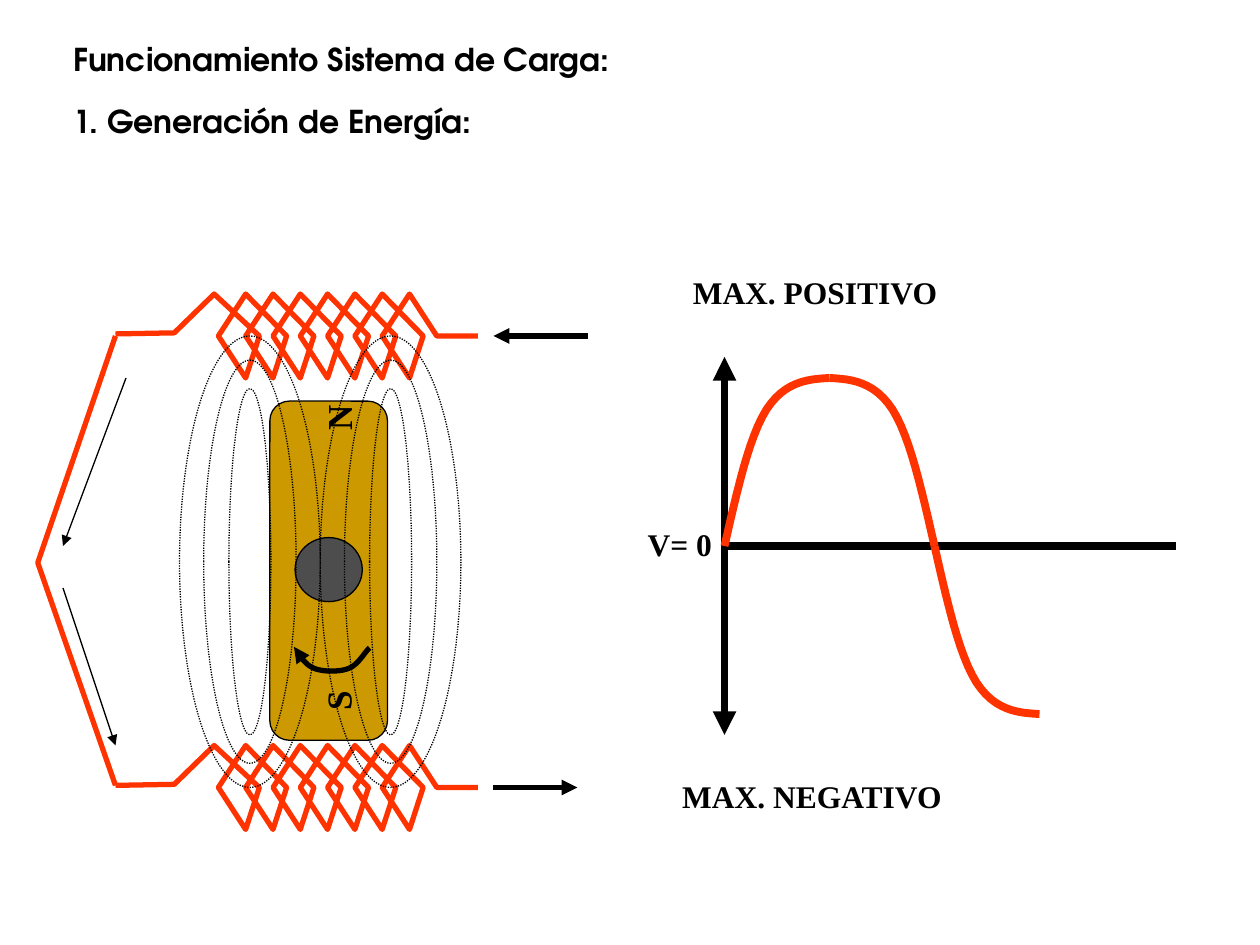
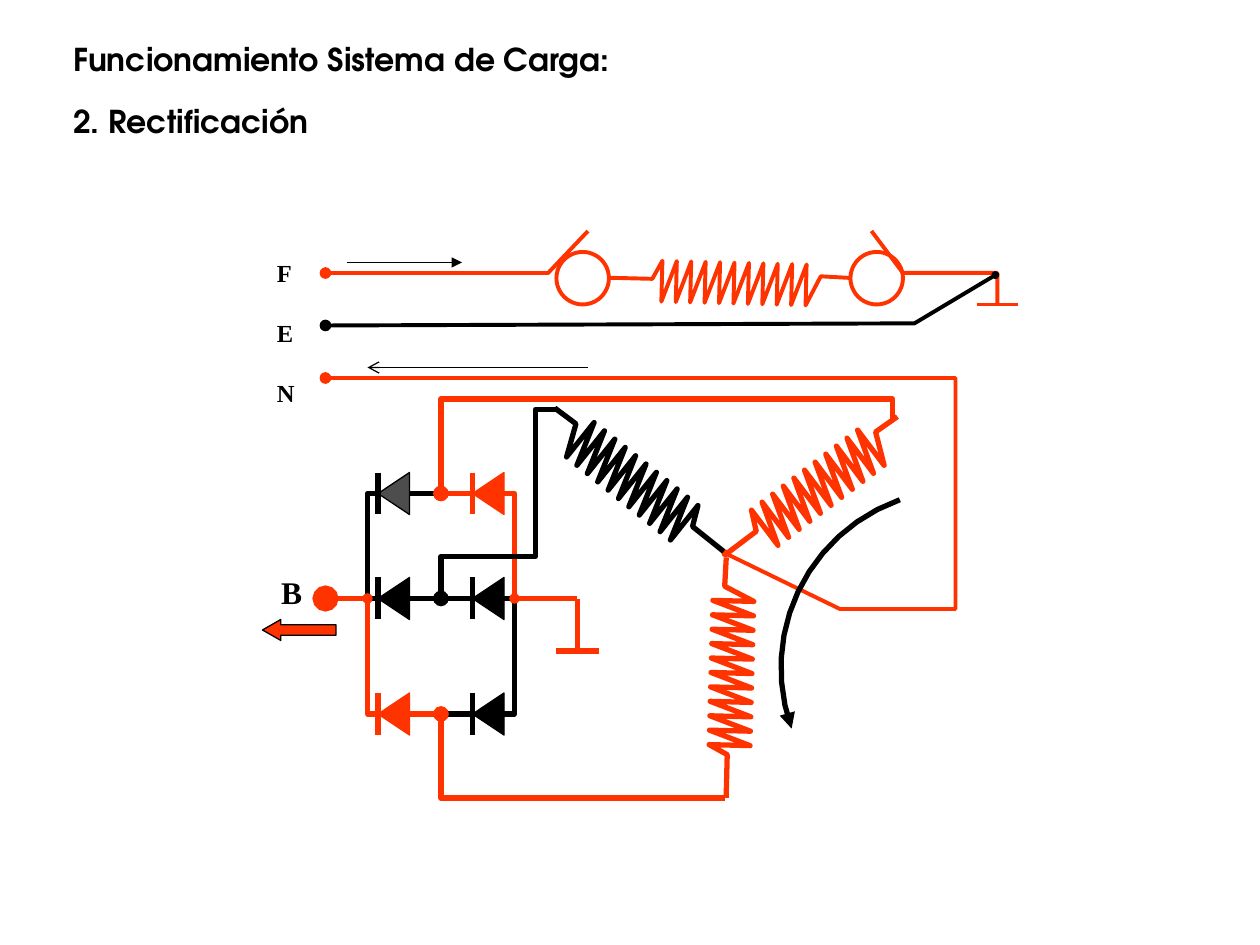
import dataclasses

import pptx
import pptx.dml.color
import pptx.enum.dml
import pptx.enum.shapes
import pptx.enum.text
import pptx.oxml
import pptx.oxml.ns
import pptx.util

COLUMNS, ROWS = 120, 90
CELL = pptx.util.Inches(10) // COLUMNS
COLORS = {"ink": "000000", "live": "FF3300", "rotor": "CC9900", "shaft": "4D4D4D"}
TITLE_FONT = {"name": "TeX Gyre Adventor", "size": pptx.util.Pt(18), "bold": True}
LABEL_FONT = {**TITLE_FONT, "name": "Times New Roman"}
TERMINAL_FONT = {**LABEL_FONT, "size": pptx.util.Pt(14)}
POLE_FONT = {**LABEL_FONT, "size": pptx.util.Pt(20)}
KINDS = pptx.enum.shapes.MSO_SHAPE


@dataclasses.dataclass
class Box:
    """A region of a page, with its corner in grid cells."""
    page: object
    left: float
    top: float

    def point(self, column, row):
        """Turn a cell of the region into slide lengths."""
        return round((self.left + column) * CELL), round((self.top + row) * CELL)


def rgb(color):
    """Look up a named colour."""
    return pptx.dml.color.RGBColor.from_string(COLORS[color])


def add_ln_parts(shape, head, tail):
    """Add round joins and the end marks, each given as type or type:size."""
    ln = shape._element.spPr.find(pptx.oxml.ns.qn("a:ln"))
    namespace = pptx.oxml.ns.nsdecls("a")
    ln.append(pptx.oxml.parse_xml(f"<a:round {namespace}/>"))
    for tag, mark in (("headEnd", head), ("tailEnd", tail)):
        if mark:
            kind, _, size = mark.partition(":")
            size = size or "med"
            ln.append(pptx.oxml.parse_xml(
                f'<a:{tag} {namespace} type="{kind}" w="{size}" len="{size}"/>'))


def set_line(shape, color, width, dash=None):
    """Colour an outline and set its width in points."""
    shape.line.color.rgb = rgb(color)
    shape.line.width = pptx.util.Pt(width)
    if dash:
        shape.line.dash_style = dash


def add_wire(box, points, color="ink", width=3, head=None, tail=None):
    """Draw a straight line as a connector, or a longer run as an open outline."""
    spots = [box.point(*point) for point in points]
    shapes = box.page.shapes
    if len(spots) == 2:
        wire = shapes.add_connector(
            pptx.enum.shapes.MSO_CONNECTOR.STRAIGHT, *spots[0], *spots[1])
        set_line(wire, color, width)
        wire._element.spPr.append(
            pptx.oxml.parse_xml(f"<a:effectLst {pptx.oxml.ns.nsdecls('a')}/>"))
    else:
        builder = shapes.build_freeform(*spots[0])
        builder.add_line_segments(spots[1:], close=False)
        wire = builder.convert_to_shape()
        wire.shadow.inherit = False
        wire.fill.background()
        set_line(wire, color, width)
    add_ln_parts(wire, head, tail)
    return wire


def add_figure(box, kind, place, fill=None, color="ink", width=0.75, dash=None):
    """Draw a preset shape at left, top, width and height in cells."""
    left, top, columns, rows = place
    figure = box.page.shapes.add_shape(
        kind, *box.point(left, top), round(columns * CELL), round(rows * CELL))
    figure.shadow.inherit = False
    if fill:
        figure.fill.solid()
        figure.fill.fore_color.rgb = rgb(fill)
    else:
        figure.fill.background()
    set_line(figure, color, width, dash)
    return figure


def add_label(box, place, lines, font=LABEL_FONT, gap=0, rotation=0):
    """Write lines of text with a gap in points between them."""
    left, top, columns, rows = place
    label = box.page.shapes.add_textbox(
        *box.point(left, top), round(columns * CELL), round(rows * CELL))
    label.rotation = rotation
    frame = label.text_frame
    frame.word_wrap = False
    frame.auto_size = pptx.enum.text.MSO_AUTO_SIZE.SHAPE_TO_FIT_TEXT
    for index, text in enumerate(lines):
        para = frame.add_paragraph() if index else frame.paragraphs[0]
        if index and gap:
            para.space_before = pptx.util.Pt(gap)
        span = para.add_run()
        span.text = text
        for name, value in font.items():
            setattr(span.font, name, value)
        span.font.color.rgb = rgb("ink")


def curve(points, steps=12):
    """Sample a chain of cubic curves given as start, then control, control, end."""
    result = [points[0]]
    for first in range(0, len(points) - 1, 3):
        a, b, c, d = points[first:first + 4]
        for step in range(1, steps + 1):
            t = step / steps
            s = 1 - t
            result.append(tuple(
                s**3 * p + 3 * s * s * t * q + 3 * s * t * t * r + t**3 * e
                for p, q, r, e in zip(a, b, c, d)))
    return result


def add_titles(page, subtitle, width):
    """Write the shared heading and the heading of this page."""
    box = Box(page, 5.8, 3.2)
    add_label(box, (0, 0, 53.6, 4.8), ["Funcionamiento Sistema de Carga:"], TITLE_FONT)
    add_label(box, (0, 5.9, width, 4.8), [subtitle], TITLE_FONT)


def add_winding(box):
    """Draw a winding of seven overlapping turns with its leads."""
    points = [(42.5, 4), (38.6, 4)]
    for turn in range(7):
        x = 36 - 2.6 * turn
        points += [(x, 0), (x - 2.6, 4), (x, 8), (x + 1.3, 4)]
    add_wire(box, points + [(17.4, 0), (13.6, 3.7), (8, 3.8)], "live")


def add_generator(box):
    """Draw the windings, the rotor, its field and the current arrows."""
    for row in (0, 43):
        add_winding(Box(box.page, box.left, box.top + row))
    add_wire(box, [(8, 4), (0.6, 25.6), (8, 46.8)], "live")
    rotor = add_figure(box, KINDS.ROUNDED_RECTANGLE, (22.7, 10.2, 11.2, 32.3), "rotor")
    rotor.adjustments[0] = 0.167
    add_figure(box, KINDS.OVAL, (25.1, 23.2, 6.4, 6.1), "shaft")
    add_label(box, (27, 36.1, 4.3, 5.2), ["S"], POLE_FONT, rotation=270)
    add_label(box, (26.8, 9.2, 4.8, 5.2), ["N"], POLE_FONT, rotation=270)
    for center in (20.8, 34.2):
        for width, height in ((13.4, 43), (8.8, 38.4), (4, 33)):
            place = (center - width / 2, 25.5 - height / 2, width, height)
            add_figure(box, KINDS.OVAL, place,
                       dash=pptx.enum.dml.MSO_LINE.ROUND_DOT)
    for start, end, width in (((9, 8), (3, 24), 0.75), ((3, 28), (8, 43), 0.75),
                              ((53, 4), (44, 4), 3), ((44, 47), (52, 47), 3)):
        add_wire(box, [start, end], width=width, tail="triangle")
    spin = [(32.2, 33.7), (31.8, 34), (31.1, 35.4), (30.1, 35.7), (29.3, 36),
            (27.6, 36), (26.8, 35.6), (25.9, 35.2), (25.3, 34), (25, 33.6)]
    add_wire(box, curve(spin), tail="triangle")


def add_wave(box):
    """Draw the voltage axes, three quarters of the wave and their labels."""
    axis, zero = 9, 27
    add_wire(box, [(axis, zero), (axis + 43, zero)], width=4.5)
    add_wire(box, [(axis, zero - 18), (axis, zero + 18)], width=4.5,
             head="triangle", tail="triangle")
    quarter = [(0, 0), (1.2, 5.2), (2.3, 10.3), (4, 13), (5.7, 15.6), (7.8, 15.9), (10, 16)]
    for start, across, up in ((0, 1, 1), (20, -1, 1), (20, 1, -1)):
        points = [(axis + start + across * x, zero - up * y) for x, y in quarter]
        add_wire(box, curve(points), "live", 4.5)
    add_label(box, (4.8, 0.4, 25.8, 4.8), ["MAX. POSITIVO"])
    add_label(box, (3.8, 48.4, 27.4, 4.8), ["MAX. NEGATIVO"])
    add_label(box, (0.5, 24.4, 8.5, 4.8), ["V= 0"])


def add_coil(box, place, angle, color="live", width=3, mirrored=False):
    """Draw an eleven-tooth coil that fills a box, then turn it."""
    left, top, columns, rows = place
    shares = [(0, 0.45), (0.18, 0.45)]
    for tooth in range(11):
        x = 0.22 + 0.06 * tooth
        shares += [(x, 0), (x, 1)]
    shares += [(0.88, 0.28), (1, 0.3)]
    points = [(left + columns * (1 - x if mirrored else x), top + rows * y)
              for x, y in shares]
    add_wire(box, points, color, width).rotation = angle


def add_ground(box, column, row):
    """Draw the bar of a ground sign around a column."""
    add_wire(box, [(column - 2, row), (column + 2, row)], "live",
             2.25 if row < 10 else 3)


def add_excitation(box):
    """Draw terminals F, E and N with their wires, rings and field coil."""
    add_coil(box, (33, 3, 22.9, 3.9), 1.5, width=2.25)
    for column in (28, 56):
        add_figure(box, KINDS.OVAL, (column, 2, 5, 5), color="live", width=2.25)
    add_wire(box, [(58, 0), (61, 4), (70, 4), (70, 7)], "live", 2.25)
    add_ground(box, 70, 7)
    add_wire(box, [(31, 0), (27.2, 4), (6, 4)], "live", 2.25, tail="oval")
    add_wire(box, [(6, 14), (66, 14), (66, 36), (55, 36), (44.1, 30.7)], "live", 2.25,
             "oval", "oval:sm")
    add_wire(box, [(6, 9), (62.1, 8.8), (69.8, 4.2)], "ink", 2.25, "oval", "oval:sm")
    add_label(box, (0.2, 2, 4.1, 20.8), ["F", "E", "N"], TERMINAL_FONT, gap=17.5)
    add_wire(box, [(8, 3), (19, 3)], width=0.75, tail="triangle")
    add_wire(box, [(31, 13), (10, 13)], width=0.75, tail="arrow")


def add_stator(box):
    """Draw the three phase coils, their leads and the turning arrow."""
    add_coil(box, (8, 6, 21.1, 4.2), 38.6, "ink", mirrored=True)
    add_coil(box, (25, 6.6, 21.1, 4.2), 323)
    add_coil(box, (16.2, 24.6, 22.9, 3.9), 271.5)
    turn = [(43.7, 9.6), (34.8, 12.8), (30.2, 22.5), (33.4, 31.4)]
    add_wire(box, curve(turn), tail="triangle")
    for color, points in (
            ("ink", [(11, 1), (9, 1), (9, 15), (0, 15), (0, 19)]),
            ("live", [(27, 38), (0, 38), (0, 30)]),
            ("live", [(43, 2), (43, 0), (0, 0), (0, 9)])):
        add_wire(box, points, color, tail="oval")


def add_diode(box, column, row, fill, color):
    """Draw a diode that points left, with its bar at the given column."""
    diode = add_figure(box, KINDS.ISOSCELES_TRIANGLE, (column - 0.5, row - 1.5, 4, 3),
                       fill, color)
    diode.rotation = 270
    add_wire(box, [(column, row - 2), (column, row + 2)], color)


def add_rectifier(box):
    """Draw the bridge of six diodes, the output B and the ground."""
    middle, node = 12, 17
    for row, left, right in ((2, "ink", "live"), (middle, "ink", "ink"),
                             (23, "live", "ink")):
        for column, inner, edge, rail, color in ((11, 14, 11, 10, left),
                                                 (20, 20, 23, 24, right)):
            fill = "shaft" if (column, row) == (11, 2) else color
            add_diode(box, column, row, fill, color)
            add_wire(box, [(inner, row), (node, row)], color)
            side = dict.fromkeys([(edge, row), (rail, row), (rail, middle)])
            add_wire(box, list(side), color)
    add_wire(box, [(10, middle), (6, middle)], "live", head="oval:sm", tail="oval:lg")
    add_wire(box, [(24, middle), (30, middle)], "live", head="oval:sm")
    add_wire(box, [(30, middle), (30, 17)], "live")
    add_ground(box, 30, 17)
    add_label(box, (0.6, 9, 4.4, 4.8), ["B"])
    arrow = add_figure(box, KINDS.LEFT_ARROW, (0, 14, 7, 2), "live")
    arrow.adjustments[0], arrow.adjustments[1] = 0.5, 0.875


def main():
    """Build both pages and save the deck."""
    deck = pptx.Presentation()
    deck.slide_width, deck.slide_height = COLUMNS * CELL, ROWS * CELL
    blank = deck.slide_layouts[6]

    page = deck.slides.add_slide(blank)
    add_titles(page, "1. Generación de Energía:", 40.9)
    add_wave(Box(page, 60, 25))
    add_generator(Box(page, 3, 28))

    page = deck.slides.add_slide(blank)
    add_titles(page, "2. Rectificación", 26.6)
    add_excitation(Box(page, 25, 22))
    add_rectifier(Box(page, 25, 45))
    add_stator(Box(page, 42, 38))
    deck.save("out.pptx")


if __name__ == "__main__":
    main()
